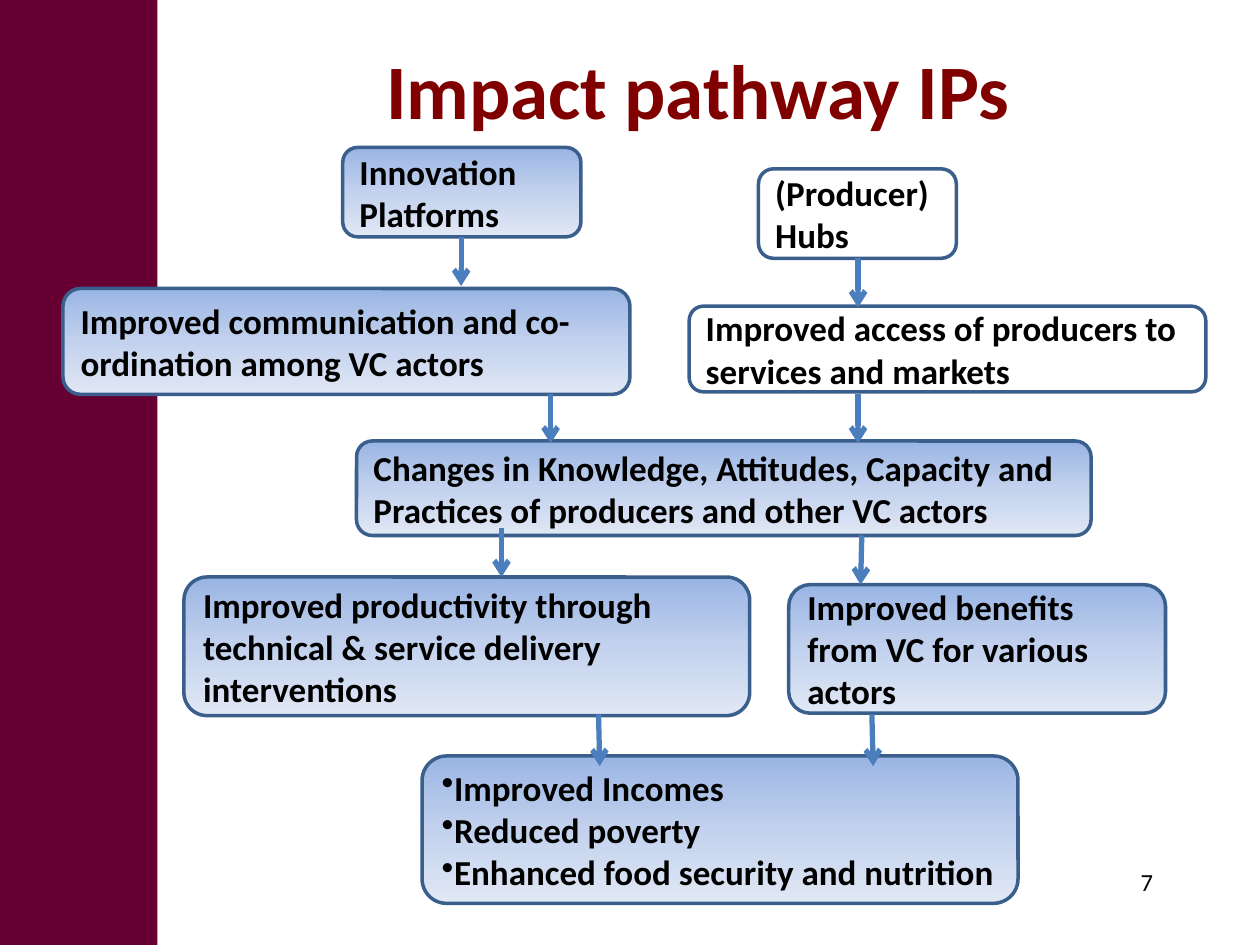
from copy import deepcopy
from dataclasses import dataclass

from lxml import etree
from pptx import Presentation
from pptx.dml.color import RGBColor
from pptx.enum.shapes import MSO_CONNECTOR, MSO_SHAPE
from pptx.enum.text import MSO_ANCHOR, PP_ALIGN
from pptx.oxml.ns import qn
from pptx.util import Inches, Pt

RECTANGLE, ROUNDED = MSO_SHAPE.RECTANGLE, MSO_SHAPE.ROUNDED_RECTANGLE
STRAIGHT = MSO_CONNECTOR.STRAIGHT
LEFT, CENTER, RIGHT = PP_ALIGN.LEFT, PP_ALIGN.CENTER, PP_ALIGN.RIGHT
TOP, MIDDLE = MSO_ANCHOR.TOP, MSO_ANCHOR.MIDDLE

WIDTH, HEIGHT = Inches(10), Inches(7.5)
COLUMNS, ROWS = 100, 75

MAROON = RGBColor(0x66, 0x00, 0x33)
TITLE_RED = RGBColor(0x80, 0x00, 0x00)
BLACK = RGBColor(0x00, 0x00, 0x00)
OUTLINE_BLUE = RGBColor(0x3A, 0x5F, 0x8C)
ARROW_BLUE = RGBColor(0x4B, 0x7E, 0xBC)
GRADIENT = (
    RGBColor(0x9A, 0xB5, 0xE4),
    RGBColor(0xC2, 0xD1, 0xED),
    RGBColor(0xE1, 0xE8, 0xF5),
)

TITLE_FORMAT = {"name": "Calibri", "size": Pt(44), "bold": True}
STEP_FORMAT = {"name": "Calibri", "size": Pt(20), "bold": True}
NUMBER_FORMAT = {"name": "Calibri", "size": Pt(14), "bold": False}


@dataclass(frozen=True)
class Area:
    column: float
    row: float
    columns: float
    rows: float

    def place(self) -> tuple[int, int, int, int]:
        return (x(self.column), y(self.row), x(self.columns), y(self.rows))


@dataclass(frozen=True)
class Step:
    area: Area
    lines: tuple[str, ...]
    shaded: bool = True
    bulleted: bool = False


@dataclass(frozen=True)
class Arrow:
    column: float
    row: float
    rows: float = 3.9
    drift: float = 0


STEPS = (
    Step(Area(27.2, 11.7, 18.9, 7.1), ("Innovation Platforms",)),
    Step(Area(60.2, 13.4, 15.7, 7.1), ("(Producer) Hubs",), shaded=False),
    Step(Area(5, 22.9, 45, 8.4),
         ("Improved communication and co-ordination among VC actors",)),
    Step(Area(54.7, 24.3, 41, 6.8),
         ("Improved access of producers to services and markets",), shaded=False),
    Step(Area(14.6, 45.8, 44.9, 11),
         ("Improved productivity through technical & service delivery interventions",)),
    Step(Area(28.3, 35, 58.3, 7.5),
         ("Changes in Knowledge, Attitudes, Capacity and Practices of producers "
          "and other VC actors",)),
    Step(Area(33.5, 60, 47.3, 11.7),
         ("Improved Incomes", "Reduced poverty", "Enhanced food security and nutrition"),
         bulleted=True),
    Step(Area(62.6, 46.4, 29.9, 10.2),
         ("Improved benefits from VC for various actors",)),
)

ARROWS = (
    Arrow(36.6, 18.8),
    Arrow(68.1, 20.5),
    Arrow(43.7, 31.3),
    Arrow(68.1, 31.3),
    Arrow(39.8, 41.9),
    Arrow(68.4, 42.5, drift=-0.1),
    Arrow(47.5, 56.7, rows=4.1, drift=0.1),
    Arrow(69.2, 56.7, rows=4.1, drift=0.1),
)


def x(columns: float) -> int:
    return round(WIDTH * columns / COLUMNS)


def y(rows: float) -> int:
    return round(HEIGHT * rows / ROWS)


def write(frame, lines, font_format, color, align=LEFT, anchor=MIDDLE, bulleted=False) -> None:
    frame.word_wrap = True
    frame.vertical_anchor = anchor
    for index, line in enumerate(lines):
        paragraph = frame.paragraphs[0] if index == 0 else frame.add_paragraph()
        paragraph.alignment = align
        if bulleted:
            etree.SubElement(paragraph._p.get_or_add_pPr(), qn("a:buChar"), char="•")
        font = paragraph.add_run()
        font.text = line
        font = font.font
        for attribute, value in font_format.items():
            setattr(font, attribute, value)
        font.color.rgb = color


def shade(shape) -> None:
    shape.fill.gradient()
    shape.fill.gradient_angle = 270
    first = shape._element.spPr.find(".//" + qn("a:gs"))
    first.addnext(deepcopy(first))
    for index, (stop, color) in enumerate(zip(shape.fill.gradient_stops, GRADIENT)):
        stop.position = index / (len(GRADIENT) - 1)
        stop.color.rgb = color


def draw_side_band(slide) -> None:
    band = slide.shapes.add_shape(RECTANGLE, *Area(0, 0, 12.5, ROWS).place())
    band.shadow.inherit = False
    band.fill.solid()
    band.fill.fore_color.rgb = MAROON
    band.line.fill.background()


def draw_label(slide, area: Area, label: str, font_format: dict, color: RGBColor,
               align, anchor) -> None:
    box = slide.shapes.add_textbox(*area.place())
    write(box.text_frame, (label,), font_format, color, align, anchor)


def draw_step(slide, step: Step) -> None:
    box = slide.shapes.add_shape(ROUNDED, *step.area.place())
    box.shadow.inherit = False
    if step.shaded:
        shade(box)
    else:
        box.fill.background()
    box.line.color.rgb = OUTLINE_BLUE
    box.line.width = Pt(2)
    write(box.text_frame, step.lines, STEP_FORMAT, BLACK, bulleted=step.bulleted)


def draw_arrow(slide, arrow: Arrow) -> None:
    connector = slide.shapes.add_connector(
        STRAIGHT, x(arrow.column), y(arrow.row),
        x(arrow.column + arrow.drift), y(arrow.row + arrow.rows))
    connector.line.color.rgb = ARROW_BLUE
    connector.line.width = Pt(3)
    etree.SubElement(connector.line._get_or_add_ln(), qn("a:tailEnd"), type="arrow")
    etree.SubElement(connector._element.spPr, qn("a:effectLst"))


def main() -> None:
    deck = Presentation()
    deck.slide_width, deck.slide_height = WIDTH, HEIGHT
    slide = deck.slides.add_slide(deck.slide_layouts[6])
    draw_side_band(slide)
    draw_label(slide, Area(18.3, 0.8, 74.2, 12.5), "Impact pathway IPs",
               TITLE_FORMAT, TITLE_RED, CENTER, MIDDLE)
    draw_label(slide, Area(71.7, 68.3, 20.8, 5), "7",
               NUMBER_FORMAT, BLACK, RIGHT, TOP)
    for step in STEPS:
        draw_step(slide, step)
    for arrow in ARROWS:
        draw_arrow(slide, arrow)
    deck.save("out.pptx")


if __name__ == "__main__":
    main()
